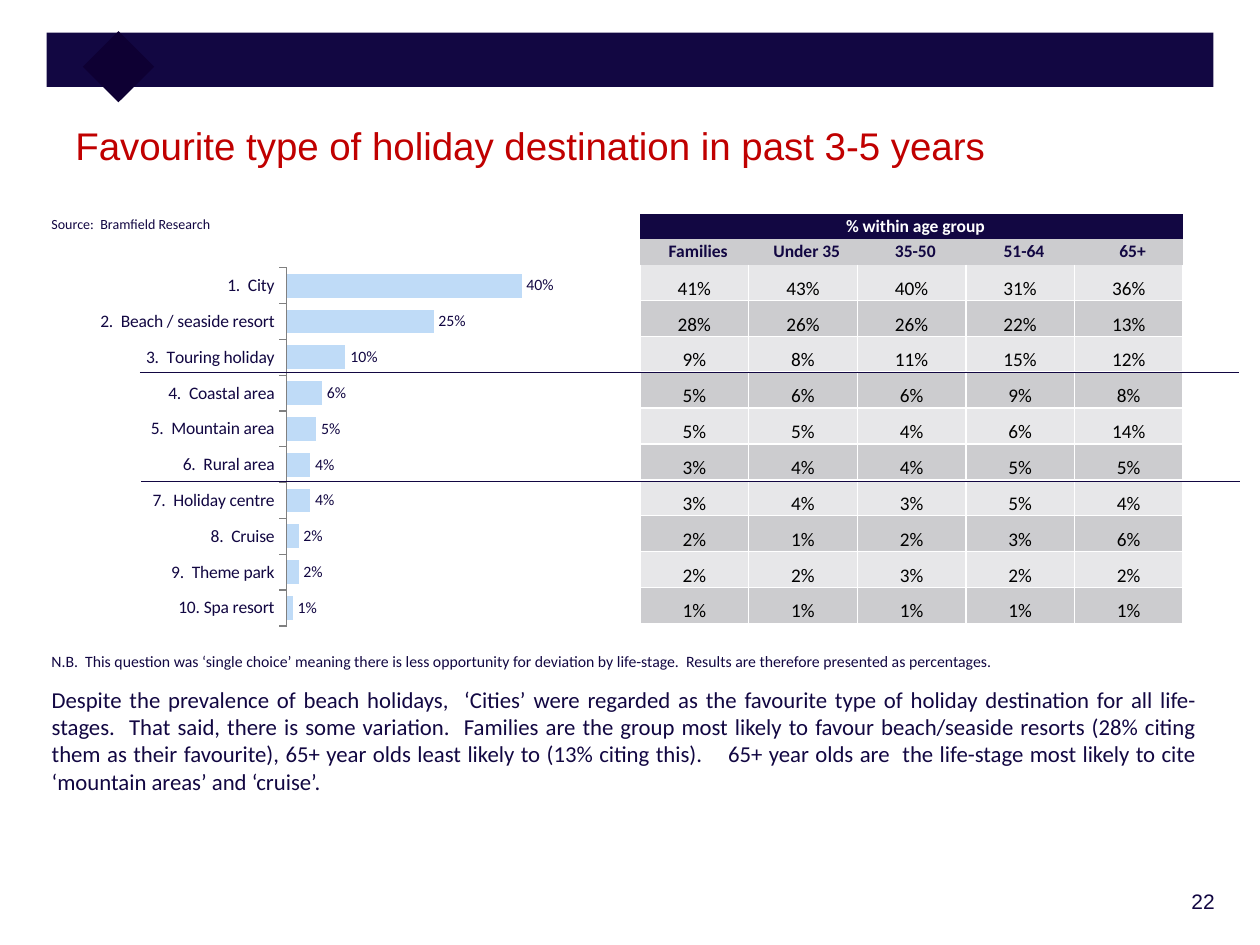
"""Build the slide on favourite holiday destinations by age group."""
from lxml import etree
from pptx import Presentation
from pptx.chart.data import CategoryChartData
from pptx.dml.color import RGBColor
from pptx.enum import chart as charts, shapes, text
from pptx.oxml import ns, xmlchemy
from pptx.util import Inches, Pt

NAVY = RGBColor(0x12, 0x07, 0x42)
DARK = RGBColor(0x0E, 0x00, 0x33)
RED = RGBColor(0xC0, 0x00, 0x00)
WHITE = RGBColor(0xFF, 0xFF, 0xFF)
BLACK = RGBColor(0x00, 0x00, 0x00)
GREY = RGBColor(0x80, 0x80, 0x80)
PALE = RGBColor(0xE7, 0xE7, 0xE9)
SILVER = RGBColor(0xCC, 0xCC, 0xCF)
SKY = RGBColor(0xBF, 0xDB, 0xF7)
ALIGN = text.PP_ALIGN
ANCHOR = text.MSO_ANCHOR
NO_GRID_STYLE = "{2D5ABB26-0587-4C30-8999-92F81FD0307C}"


def write(frame, words, size=10, font="Calibri", color=NAVY, bold=False,
          align=ALIGN.LEFT, spacing=None):
    para = frame.paragraphs[0]
    para.alignment = align
    para.line_spacing = spacing
    span = para.add_run()
    span.text = words
    span.font.size = Pt(size)
    span.font.name = font
    span.font.bold = bold
    span.font.color.rgb = color


def add_text(left, top, width, height, words, wrap=True, inset=0.1, **style):
    box = page.shapes.add_textbox(Inches(left), Inches(top), Inches(width), Inches(height))
    box.text_frame.word_wrap = wrap
    box.text_frame.margin_left = Inches(inset)
    write(box.text_frame, words, **style)


deck = Presentation()
deck.slide_width, deck.slide_height = Inches(10), Inches(7.5)
page = deck.slides.add_slide(deck.slide_layouts[6])

for left, top, width, height, color, turn in (
        (0.37, 0.26, 9.26, 0.43, NAVY, 0), (0.74, 0.33, 0.4, 0.4, DARK, 45)):
    banner = page.shapes.add_shape(shapes.MSO_SHAPE.RECTANGLE, Inches(left), Inches(top),
                                   Inches(width), Inches(height))
    banner.rotation = turn
    banner.shadow.inherit = False
    banner.fill.solid()
    banner.fill.fore_color.rgb = color
    banner.line.fill.background()

add_text(8.53, 7, 1.21, 0.36, "22", size=12, font="Arial", align=ALIGN.RIGHT)
add_text(0.5, 0.95, 9.13, 0.89, "Favourite type of holiday destination in past 3-5 years",
         size=22, font="Arial", color=RED, spacing=Pt(24))

age_groups = ["Families", "Under 35", "35-50", "51-64", "65+"]
shares = [
    [41, 43, 40, 31, 36],
    [28, 26, 26, 22, 13],
    [9, 8, 11, 15, 12],
    [5, 6, 6, 9, 8],
    [5, 5, 4, 6, 14],
    [3, 4, 4, 5, 5],
    [3, 4, 3, 5, 4],
    [2, 1, 2, 3, 6],
    [2, 2, 3, 2, 2],
    [1, 1, 1, 1, 1],
]
rows = [["% within age group"], age_groups] + [[f"{share}%" for share in row] for row in shares]
table = page.shapes.add_table(len(rows), len(age_groups), Inches(5.08), Inches(1.7),
                              Inches(4.31), Inches(3.25)).table
table.first_row = table.horz_banding = False
table._tbl.tblPr.find(ns.qn("a:tableStyleId")).text = NO_GRID_STYLE
table.cell(0, 0).merge(table.cell(0, len(age_groups) - 1))
for column in table.columns:
    column.width = Inches(4.31 / len(age_groups))
for r, row in enumerate(rows):
    heading = r < 2
    table.rows[r].height = Inches(0.2 if heading else 2.85 / len(shares))
    for c, words in enumerate(row):
        cell = table.cell(r, c)
        cell.margin_left = Inches(0.08 if heading else 0.01)
        cell.margin_right = Inches(0.02 if heading else 0.01)
        cell.margin_top = Inches(0 if heading else 0.01)
        cell.margin_bottom = 0
        cell.vertical_anchor = ANCHOR.MIDDLE if heading else ANCHOR.BOTTOM
        for side in () if heading else ("lnL", "lnR", "lnB"):
            border = etree.SubElement(cell._tc.get_or_add_tcPr(), ns.qn(f"a:{side}"), w=str(Pt(1)))
            paint = etree.SubElement(border, ns.qn("a:solidFill"))
            etree.SubElement(paint, ns.qn("a:srgbClr"), val=str(WHITE))
        cell.fill.solid()
        cell.fill.fore_color.rgb = NAVY if r == 0 else SILVER if r % 2 else PALE
        write(cell.text_frame, words, size=10 if heading else 11, bold=heading,
              color=WHITE if r == 0 else NAVY if heading else BLACK, align=ALIGN.CENTER)

data = CategoryChartData()
data.categories = [
    "1.  City", "2.  Beach / seaside resort", "3.  Touring holiday", "4.  Coastal area",
    "5.  Mountain area", "6.  Rural area", "7.  Holiday centre", "8.  Cruise",
    "9.  Theme park", "10. Spa resort",
]
data.add_series("Series 1", [40, 25, 10, 6, 5, 4, 4, 2, 2, 1])
chart = page.shapes.add_chart(charts.XL_CHART_TYPE.BAR_CLUSTERED, Inches(0.35), Inches(1.9),
                              Inches(4.48), Inches(3.23), data).chart
chart.has_title = chart.has_legend = False
chart.font.size = Pt(10)
chart.font.name = "Calibri"
chart.font.color.rgb = NAVY
destinations = chart.category_axis
destinations.reverse_order = True
destinations.has_major_gridlines = False
destinations.major_tick_mark = charts.XL_TICK_MARK.OUTSIDE
destinations.format.line.color.rgb = GREY
scale = chart.value_axis
scale.minimum_scale, scale.maximum_scale = 0, 50
scale.has_major_gridlines = False
scale.visible = False
plot = chart.plots[0]
plot.gap_width = 50
plot.vary_by_categories = False
plot.series[0].format.fill.solid()
plot.series[0].format.fill.fore_color.rgb = SKY
labels = plot.series[0].data_labels
labels.show_value = True
labels.number_format = r"General\%"
labels.number_format_is_linked = False
labels.position = charts.XL_LABEL_POSITION.OUTSIDE_END
labels.font.size = Pt(9)
labels.font.name = "Calibri"
labels.font.color.rgb = NAVY

area = chart._chartSpace.chart.plotArea
for old in area.findall(ns.qn("c:layout")):
    area.remove(old)
layout = xmlchemy.OxmlElement("c:layout")
area.insert(0, layout)
manual = etree.SubElement(layout, ns.qn("c:manualLayout"))
for tag, value in (("layoutTarget", "inner"), ("xMode", "edge"), ("yMode", "edge"),
                   ("x", 0.43), ("y", 0.07), ("w", 0.52), ("h", 0.88)):
    etree.SubElement(manual, ns.qn(f"c:{tag}"), val=str(value))

add_text(0.31, 1.66, 1.5, 0.24, "Source:  Bramfield Research", size=8, wrap=False)
add_text(0.37, 5.39, 9.21, 1.51,
         "Despite the prevalence of beach holidays,  ‘Cities’ were regarded as the favourite type "
         "of holiday destination for all life-stages.  That said, there is some variation.  "
         "Families are the group most likely to favour beach/seaside resorts (28% citing them as "
         "their favourite), 65+ year olds least likely to (13% citing this).    65+ year olds are  "
         "the life-stage most likely to cite ‘mountain areas’ and ‘cruise’.",
         size=13, align=ALIGN.JUSTIFY, inset=0.04)

for left, top in ((1.11, 2.96), (1.12, 3.82)):
    divider = page.shapes.add_connector(shapes.MSO_CONNECTOR.STRAIGHT, Inches(left), Inches(top),
                                        Inches(left + 8.72), Inches(top))
    divider.line.color.rgb = NAVY
    divider.line.width = Pt(0.5)
    etree.SubElement(divider._element.spPr, ns.qn("a:effectLst"))

add_text(0.31, 5.12, 7.74, 0.25,
         "N.B.  This question was ‘single choice’ meaning there is less opportunity for deviation "
         "by life-stage.  Results are therefore presented as percentages.", size=9, wrap=False)

deck.save("out.pptx")
